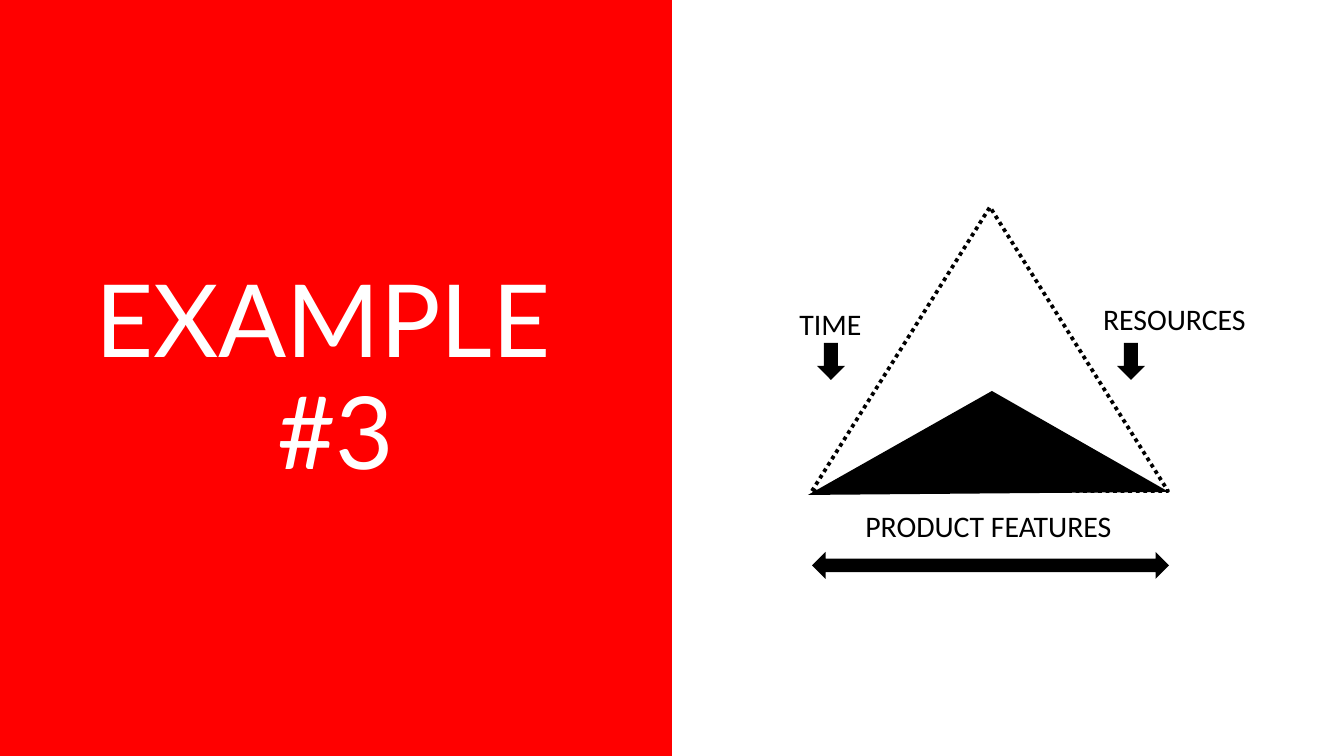
from pptx import Presentation
from pptx.dml.color import RGBColor
from pptx.enum.dml import MSO_LINE
from pptx.enum.shapes import MSO_SHAPE
from pptx.enum.text import MSO_ANCHOR, PP_ALIGN
from pptx.util import Pt

SCALE = 9144000 / 1344
WIDTH, HEIGHT = 1344, 756
RED, BLACK, WHITE = "FF0000", "000000", "FFFFFF"


def px(length):
    return round(length * SCALE)


def color(value):
    return RGBColor.from_string(value)


class SlideBuilder:
    font = "Calibri"
    size = 16

    def __init__(self, page):
        self.page = page

    def paint(self, shape, fill):
        shape.shadow.inherit = False
        shape.line.fill.background()
        if fill:
            shape.fill.solid()
            shape.fill.fore_color.rgb = color(fill)
        else:
            shape.fill.background()
        return shape

    def shape(self, kind, left, top, width, height, fill=None):
        shape = self.page.shapes.add_shape(
            kind, px(left), px(top), px(width), px(height))
        return self.paint(shape, fill)

    def dotted(self, kind, left, top, width, height, line):
        shape = self.shape(kind, left, top, width, height)
        shape.line.color.rgb = color(line)
        shape.line.width = Pt(2)
        shape.line.dash_style = MSO_LINE.ROUND_DOT

    def polygon(self, points, fill):
        start, *others = points
        builder = self.page.shapes.build_freeform(*start, scale=SCALE)
        builder.add_line_segments(others, close=True)
        self.paint(builder.convert_to_shape(), fill)

    def text(self, words, left, top, width, height, fill=BLACK,
             font=None, size=None, spacing=None):
        box = self.page.shapes.add_textbox(
            px(left), px(top), px(width), px(height))
        frame = box.text_frame
        frame.word_wrap = True
        frame.vertical_anchor = MSO_ANCHOR.MIDDLE
        frame.margin_left = frame.margin_right = 0
        frame.margin_top = frame.margin_bottom = 0
        frame.text = words
        for para in frame.paragraphs:
            para.alignment = PP_ALIGN.CENTER
            if spacing:
                para.line_spacing = Pt(spacing)
            for span in para.runs:
                span.font.name = font or self.font
                span.font.size = Pt(size or self.size)
                span.font.color.rgb = color(fill)


def main():
    deck = Presentation()
    deck.slide_width, deck.slide_height = px(WIDTH), px(HEIGHT)
    slide = SlideBuilder(deck.slides.add_slide(deck.slide_layouts[6]))

    panel = (0, 0, WIDTH // 2, HEIGHT)
    slide.shape(MSO_SHAPE.RECTANGLE, *panel, RED)
    slide.text("EXAMPLE \v#3", *panel, WHITE, "Lato", 54, 60)

    slide.dotted(MSO_SHAPE.ISOSCELES_TRIANGLE, 812, 207, 356, 284, BLACK)
    slide.polygon([(808, 495), (992, 391), (1169, 492)], BLACK)
    for left in (817, 1117):
        slide.shape(MSO_SHAPE.DOWN_ARROW, left, 343, 28, 37, BLACK)
    slide.shape(MSO_SHAPE.LEFT_RIGHT_ARROW, 812, 552, 357, 27, BLACK)

    for words, left, top, width in (
        ("TIME", 735, 298, 191),
        ("PRODUCT FEATURES", 814, 500, 349),
        ("RESOURCES", 1063, 293, 223),
    ):
        slide.text(words, left, top, width, 52)

    deck.save("out.pptx")


if __name__ == "__main__":
    main()
